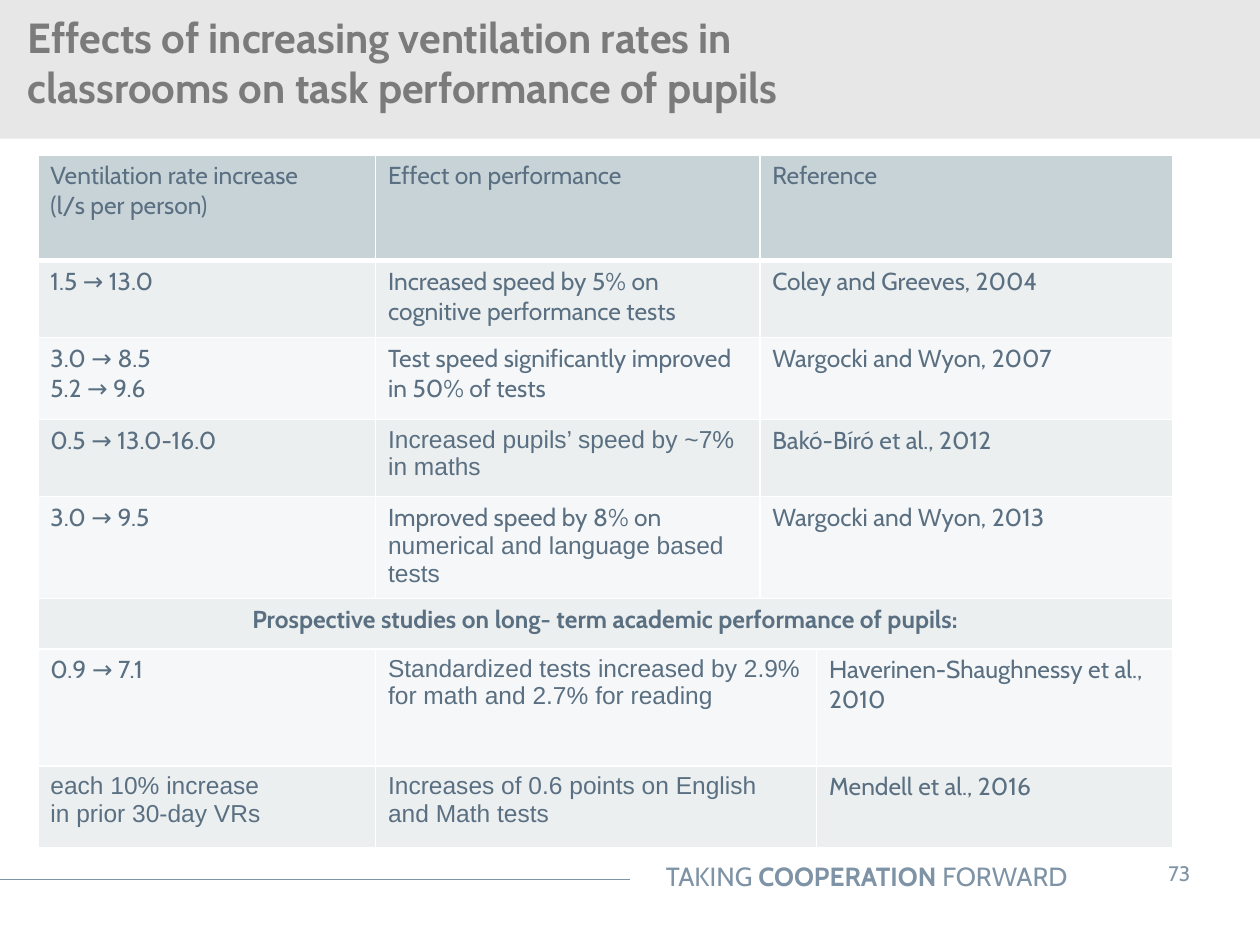
import pptx
import pptx.util
import pptx.dml.color
import pptx.enum.shapes
import pptx.enum.text
import pptx.oxml
import pptx.oxml.ns

colours = {
    "band": "E7E7E7", "title": "7B7B7B", "footer": "7E93A5", "text": "5A6F81",
    "header": "C8D3D8", "odd": "EBEFF0", "even": "F5F7F8", "border": "FFFFFF",
}
cabin, arial = "Cabin", "Arial"
align = pptx.enum.text.PP_ALIGN

deck = pptx.Presentation()
deck.slide_width = pptx.util.Inches(10)
deck.slide_height = pptx.util.Inches(7.5)
column = deck.slide_width / 100
row = deck.slide_height / 75


def grid(left, top, width, height):
    return [round(left * column), round(top * row), round(width * column), round(height * row)]


def write(para, spans, size, colour, alignment=align.LEFT):
    para.alignment = alignment
    for font, text, bold in spans:
        span = para.add_run()
        span.text = text
        for name, value in {"name": font, "size": pptx.util.Pt(size), "bold": bold}.items():
            setattr(span.font, name, value)
        span.font.color.rgb = pptx.dml.color.RGBColor.from_string(colours[colour])


page = deck.slides.add_slide(deck.slide_layouts[5])

rule = page.shapes.add_connector(
    pptx.enum.shapes.MSO_CONNECTOR.STRAIGHT, 0, round(69.8 * row), round(50 * column), round(69.8 * row))
rule.line.width = pptx.util.Pt(0.75)
rule.line.color.rgb = pptx.dml.color.RGBColor.from_string(colours["footer"])
rule._element.spPr.append(pptx.oxml.parse_xml(f"<a:effectLst {pptx.oxml.ns.nsdecls('a')}/>"))

band = page.shapes.add_shape(pptx.enum.shapes.MSO_SHAPE.RECTANGLE, *grid(0, 0, 100, 11))
band.shadow.inherit = False
band.fill.solid()
band.fill.fore_color.rgb = pptx.dml.color.RGBColor.from_string(colours["band"])
band.line.fill.background()

footers = [
    (grid(38.8, 67.8, 46.9, 3.5), 15, align.RIGHT,
     [(cabin, "TAKING ", False), (cabin, "COOPERATION", True), (cabin, " FORWARD", False)]),
    (grid(89.9, 67.3, 7.4, 4), 12, align.CENTER, [(cabin, "73", False)]),
]
for place, size, alignment, spans in footers:
    box = page.shapes.add_textbox(*place)
    box.text_frame.word_wrap = True
    write(box.text_frame.paragraphs[0], spans, size, "footer", alignment)
box.text_frame.margin_left = box.text_frame.margin_right = round(2 * column)
box.text_frame.margin_top = box.text_frame.margin_bottom = round(row)

title = page.shapes.title
page.shapes.element.append(title.element)
for name, value in zip(("left", "top", "width", "height"), grid(1.2, 0.4, 74, 9.1)):
    setattr(title, name, value)
frame_format = {
    "word_wrap": True,
    "auto_size": pptx.enum.text.MSO_AUTO_SIZE.NONE,
    "vertical_anchor": pptx.enum.text.MSO_ANCHOR.TOP,
}
for name, value in frame_format.items():
    setattr(title.text_frame, name, value)
write(title.text_frame.paragraphs[0],
      [(cabin, "Effects of increasing ventilation rates in classrooms on task performance of pupils", True)],
      24, "title")

studies = [
    (8.4, [1, 1, 2], [[[(cabin, "Ventilation rate increase")], [(cabin, "(l/s per person)")]],
                      [[(cabin, "Effect on performance")]],
                      [[(cabin, "Reference")]]]),
    (6.1, [1, 1, 2], [[[(cabin, "1.5 → 13.0")]],
                      [[(cabin, "Increased speed by 5% on cognitive performance tests")]],
                      [[(cabin, "Coley and Greeves, 2004")]]]),
    (6.5, [1, 1, 2], [[[(cabin, "3.0 → 8.5")], [(cabin, "5.2 → 9.6")]],
                      [[(cabin, "Test speed significantly improved in 50% of tests")]],
                      [[(cabin, "Wargocki and Wyon, 2007")]]]),
    (6.1, [1, 1, 2], [[[(cabin, "0.5 → 13.0-16.0")]],
                      [[(arial, "Increased pupils’ speed by ~7% in maths")]],
                      [[(cabin, "Bakó-Bíró et al., 2012")]]]),
    (8.1, [1, 1, 2], [[[(cabin, "3.0 → 9.5")]],
                      [[(cabin, "Improved speed by 8% on "), (arial, "numerical and language based")],
                       [(arial, "tests")]],
                      [[(cabin, "Wargocki and Wyon, 2013")]]]),
    (4, [4], [[[(cabin, "Prospective studies on long- term academic performance of pupils:")]]]),
    (9.3, [1, 2, 1], [[[(cabin, "0.9 → 7.1")]],
                      [[(arial, "Standardized tests increased by 2.9% for math and 2.7% for reading")]],
                      [[(cabin, "Haverinen-Shaughnessy et al., 2010")]]]),
    (6.5, [1, 2, 1], [[[(arial, "each 10% increase")], [(arial, "in prior 30-day VRs")]],
                      [[(arial, "Increases of 0.6 points on English and Math tests")]],
                      [[(cabin, "Mendell et al., 2016")]]]),
]
widths = [26.8, 30.5, 4.5, 28.3]
heights = [study[0] for study in studies]
table = page.shapes.add_table(
    len(heights), len(widths), *grid(3, 12.3, sum(widths), sum(heights))).table
table.first_row = table.horz_banding = False
for index, width in enumerate(widths):
    table.columns[index].width = round(width * column)

for index, (height, joins, contents) in enumerate(studies):
    table.rows[index].height = round(height * row)
    shade = "header" if index == 0 else "odd" if index % 2 else "even"
    for cell in table.rows[index].cells:
        for side in "LRTB":
            points = 3 if index == 0 and side == "B" else 1
            cell._tc.get_or_add_tcPr().append(pptx.oxml.parse_xml(
                f"<a:ln{side} {pptx.oxml.ns.nsdecls('a')} w='{pptx.util.Pt(points)}'>"
                f"<a:solidFill><a:srgbClr val='{colours['border']}'/></a:solidFill></a:ln{side}>"))
        cell.fill.solid()
        cell.fill.fore_color.rgb = pptx.dml.color.RGBColor.from_string(colours[shade])
    start = 0
    section = len(joins) == 1
    for join, paragraphs in zip(joins, contents):
        cell = table.cell(index, start)
        if join > 1:
            cell.merge(table.cell(index, start + join - 1))
        for number, spans in enumerate(paragraphs):
            frame = cell.text_frame
            para = frame.add_paragraph() if number else frame.paragraphs[0]
            write(para, [(font, text, section) for font, text in spans], 14, "text",
                  align.CENTER if section else align.LEFT)
        start += join

deck.save("out.pptx")
